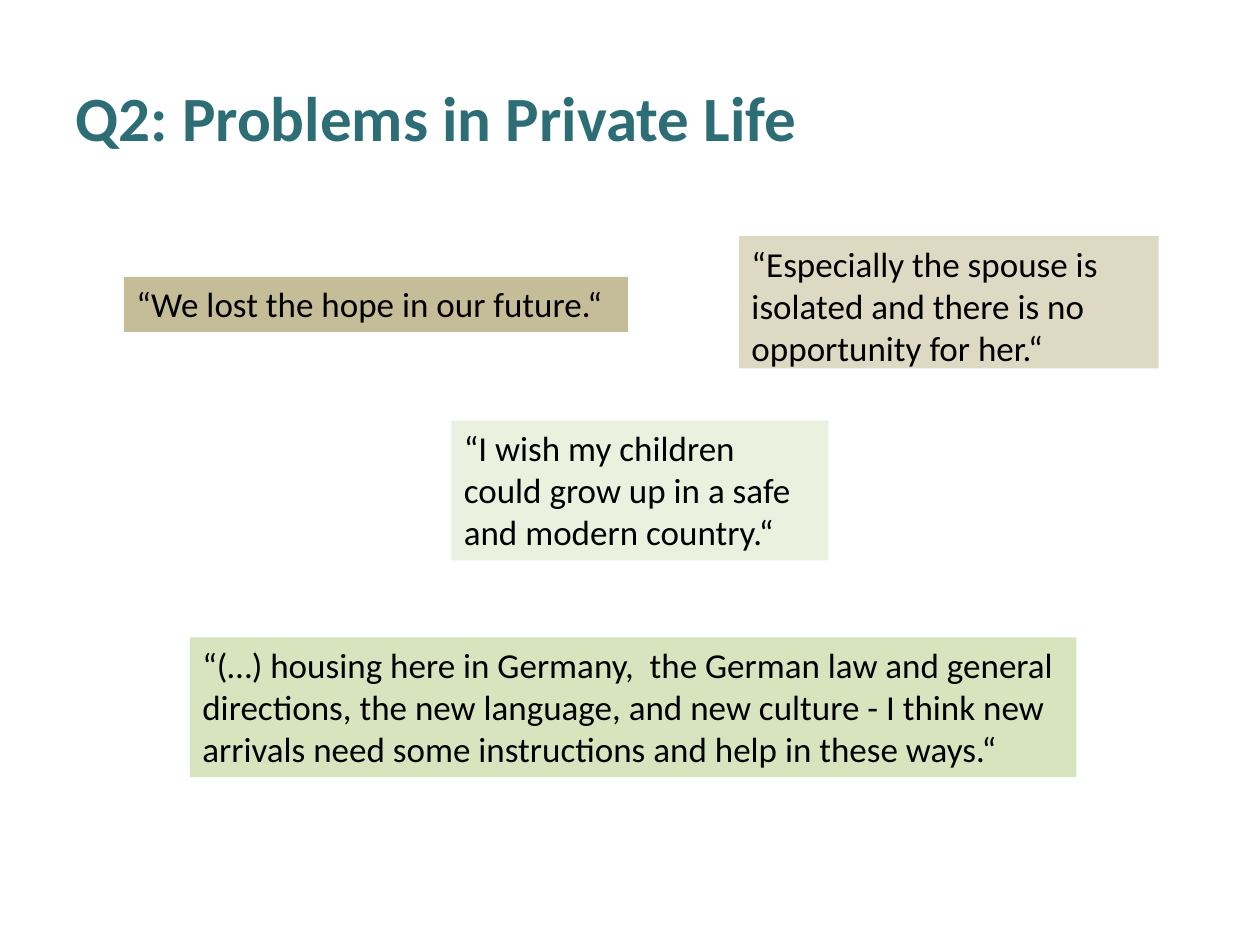
from pptx import Presentation
from pptx import util as u
from pptx.dml.color import RGBColor
from pptx.enum import shapes, text

COLOURS = {
    "title": "2D6E76",
    "text": "000000",
    "sand": "DDD9C3",
    "khaki": "C4BD97",
    "mint": "EBF1DE",
    "green": "D7E4BD",
}

# Quote, fill, then left, top, width and height in centimetres
QUOTES = [
    ("“Especially the spouse is isolated and there is no opportunity for her.“",
     "sand", (14.9, 4.76, 8.46, 2.67)),
    ("“We lost the hope in our future.“",
     "khaki", (2.5, 5.58, 10.16, 1.11)),
    ("“I wish my children could grow up in a safe and modern country.“",
     "mint", (9.1, 8.48, 7.6, 2.82)),
    ("“(…) housing here in Germany,  the German law and general directions, "
     "the new language, and new culture - I think new arrivals need some "
     "instructions and help in these ways.“",
     "green", (3.83, 12.85, 17.87, 2.82)),
]


class SlideBuilder:
    def __init__(self, presentation, font="Calibri"):
        self.font = font
        self.slide = presentation.slides.add_slide(presentation.slide_layouts[6])

    def set_words(self, shape, words, size, colour, anchor, bold=False):
        frame = shape.text_frame
        frame.word_wrap = True
        frame.vertical_anchor = anchor
        frame.text = words
        paragraph = frame.paragraphs[0]
        paragraph.alignment = text.PP_ALIGN.LEFT
        font = paragraph.runs[0].font
        font.name = self.font
        font.size = u.Pt(size)
        font.bold = bold
        font.color.rgb = RGBColor.from_string(COLOURS[colour])

    def title(self, words, box):
        shape = self.slide.shapes.add_textbox(*map(u.Cm, box))
        self.set_words(shape, words, 36, "title", text.MSO_ANCHOR.MIDDLE, bold=True)

    def quote(self, words, fill, box):
        shape = self.slide.shapes.add_shape(
            shapes.MSO_SHAPE.RECTANGLE, *map(u.Cm, box))
        shape.shadow.inherit = False
        shape.fill.solid()
        shape.fill.fore_color.rgb = RGBColor.from_string(COLOURS[fill])
        shape.line.fill.background()
        self.set_words(shape, words, 20, "text", text.MSO_ANCHOR.TOP)


def main():
    presentation = Presentation()
    presentation.slide_width = u.Cm(25.4)
    presentation.slide_height = u.Cm(19.05)
    builder = SlideBuilder(presentation)
    builder.title("Q2: Problems in Private Life", (1.27, 0.76, 22.86, 3.18))
    for words, fill, box in QUOTES:
        builder.quote(words, fill, box)
    presentation.save("out.pptx")


if __name__ == "__main__":
    main()
